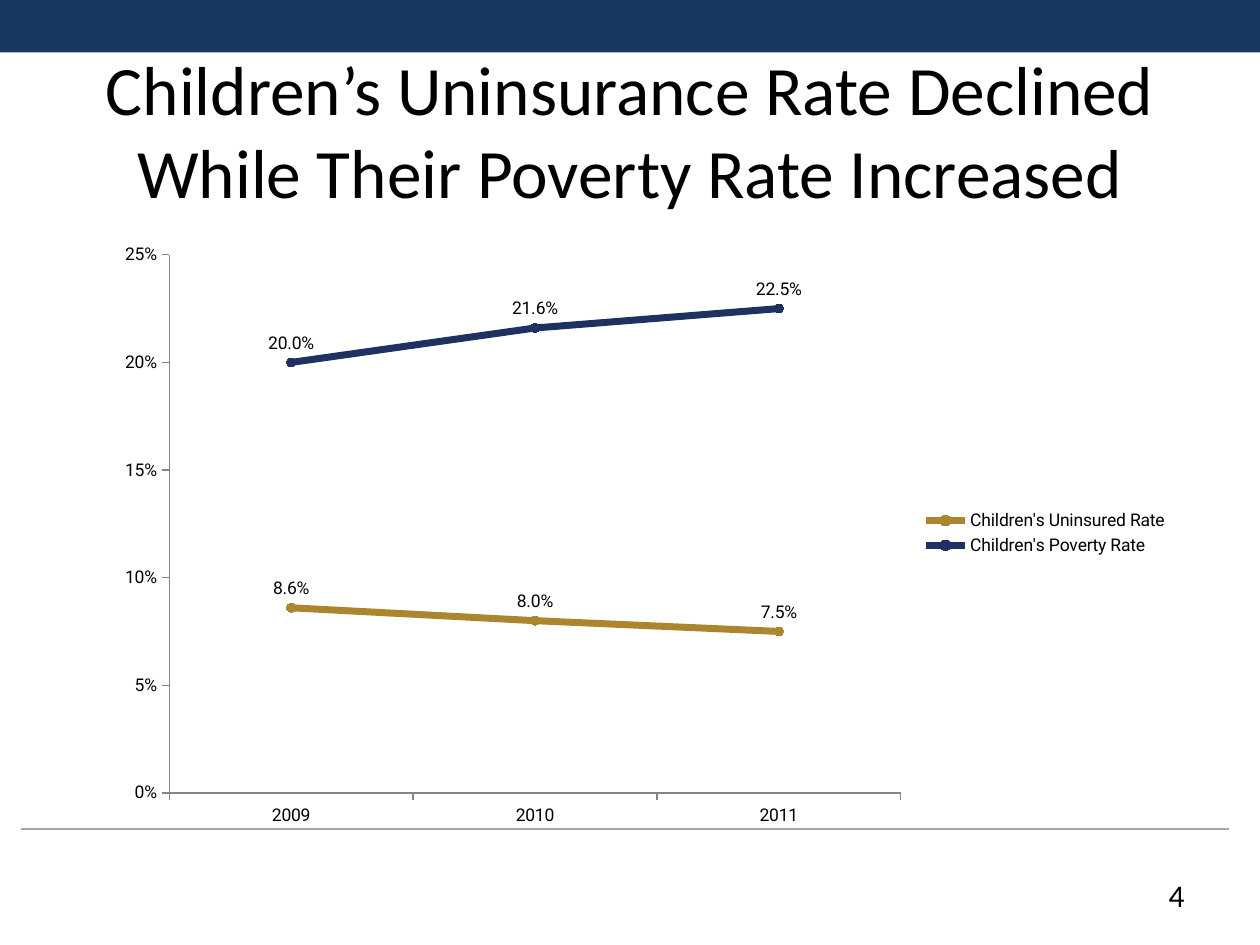
"""Build a slide with a line chart of children's uninsured and poverty rates."""
from lxml import etree
from pptx import Presentation, util as u
from pptx.chart.data import CategoryChartData
from pptx.dml.color import RGBColor
from pptx.enum import chart as c, shapes, text
from pptx.oxml import parse_xml
from pptx.oxml.ns import nsdecls, qn

TITLE = "Children’s Uninsurance Rate Declined While Their Poverty Rate Increased"
PAGE_NUMBER = "4"
YEARS = ["2009", "2010", "2011"]
SERIES = [
    ("Children's Uninsured Rate", (0.086, 0.08, 0.075), "gold"),
    ("Children's Poverty Rate", (0.2, 0.216, 0.225), "navy"),
]
COLORS = {"band": "17375E", "rule": "A6A6A6", "axis": "868686",
          "text": "000000", "gold": "AC862E", "navy": "1E3160"}
PLOT_AREA = {"x": 0.06, "y": 0.04, "w": 0.68, "h": 0.89}


def color(name):
    return RGBColor.from_string(COLORS[name])


def set_font(font, name, size):
    font.name, font.size = name, u.Pt(size)
    font.color.rgb = color("text")


def add_text(slide, box, content, size, align, anchor):
    frame = slide.shapes.add_textbox(*map(u.Cm, box)).text_frame
    frame.word_wrap = True
    frame.vertical_anchor = anchor
    paragraph = frame.paragraphs[0]
    paragraph.text = content
    paragraph.alignment = align
    set_font(paragraph.font, "Calibri", size)


def add_background(slide):
    band = slide.shapes.add_shape(shapes.MSO_SHAPE.RECTANGLE, 0, 0, u.Cm(25.4), u.Cm(1.06))
    band.shadow.inherit = False
    band.fill.solid()
    band.fill.fore_color.rgb = color("band")
    band.line.fill.background()
    rule = slide.shapes.add_connector(
        shapes.MSO_CONNECTOR.STRAIGHT, *map(u.Cm, (0.42, 16.71, 24.77, 16.71)))
    rule.line.color.rgb = color("rule")
    rule.line.width = u.Pt(0.75)
    etree.SubElement(rule._element.spPr, qn("a:effectLst"))


def style_axis(axis):
    axis.has_major_gridlines = False
    axis.major_tick_mark = c.XL_TICK_MARK.OUTSIDE
    axis.minor_tick_mark = c.XL_TICK_MARK.NONE
    axis.format.line.color.rgb = color("axis")
    axis.format.line.width = u.Pt(0.75)


def style_series(series, name):
    series.smooth = False
    series.format.line.color.rgb = color(name)
    series.format.line.width = u.Pt(4)
    marker = series.marker
    marker.style, marker.size = c.XL_MARKER_STYLE.CIRCLE, 5
    marker.format.fill.solid()
    marker.format.fill.fore_color.rgb = color(name)
    marker.format.line.color.rgb = color(name)
    labels = series.data_labels
    labels.show_value = True
    labels.position = c.XL_LABEL_POSITION.ABOVE
    labels.number_format, labels.number_format_is_linked = "0.0%", False


def place_plot(chart):
    plot_area = chart._chartSpace.chart.plotArea
    for layout in plot_area.findall(qn("c:layout")):
        plot_area.remove(layout)
    sizes = "".join(f'<c:{key} val="{value}"/>' for key, value in PLOT_AREA.items())
    plot_area.insert(0, parse_xml(
        f'<c:layout {nsdecls("c")}><c:manualLayout><c:layoutTarget val="inner"/>'
        f'<c:xMode val="edge"/><c:yMode val="edge"/>{sizes}</c:manualLayout></c:layout>'))


def add_rate_chart(slide):
    data = CategoryChartData(number_format="0.0%")
    data.categories = YEARS
    for name, values, _ in SERIES:
        data.add_series(name, values)
    chart = slide.shapes.add_chart(
        c.XL_CHART_TYPE.LINE_MARKERS, *map(u.Cm, (2.11, 4.65, 21.69, 12.19)), data).chart
    set_font(chart.font, "Roboto", 10)
    chart.has_title = False
    chart.has_legend = True
    chart.legend.position = c.XL_LEGEND_POSITION.RIGHT
    chart.legend.include_in_layout = False
    chart.plots[0].vary_by_categories = False
    for axis in (chart.category_axis, chart.value_axis):
        style_axis(axis)
    rates = chart.value_axis
    rates.minimum_scale, rates.maximum_scale, rates.major_unit = 0, 0.25, 0.05
    rates.tick_labels.number_format = "0%"
    rates.tick_labels.number_format_is_linked = False
    for series, (_, _, name) in zip(chart.plots[0].series, SERIES):
        style_series(series, name)
    place_plot(chart)


def main():
    presentation = Presentation()
    presentation.slide_width, presentation.slide_height = u.Cm(25.4), u.Cm(19.05)
    slide = presentation.slides.add_slide(presentation.slide_layouts[6])
    add_background(slide)
    add_text(slide, (1.27, 1.27, 22.86, 2.67), TITLE, 39.6,
             text.PP_ALIGN.CENTER, text.MSO_ANCHOR.MIDDLE)
    add_text(slide, (18.2, 17.53, 5.93, 1.02), PAGE_NUMBER, 18,
             text.PP_ALIGN.RIGHT, text.MSO_ANCHOR.TOP)
    add_rate_chart(slide)
    presentation.save("out.pptx")


if __name__ == "__main__":
    main()
